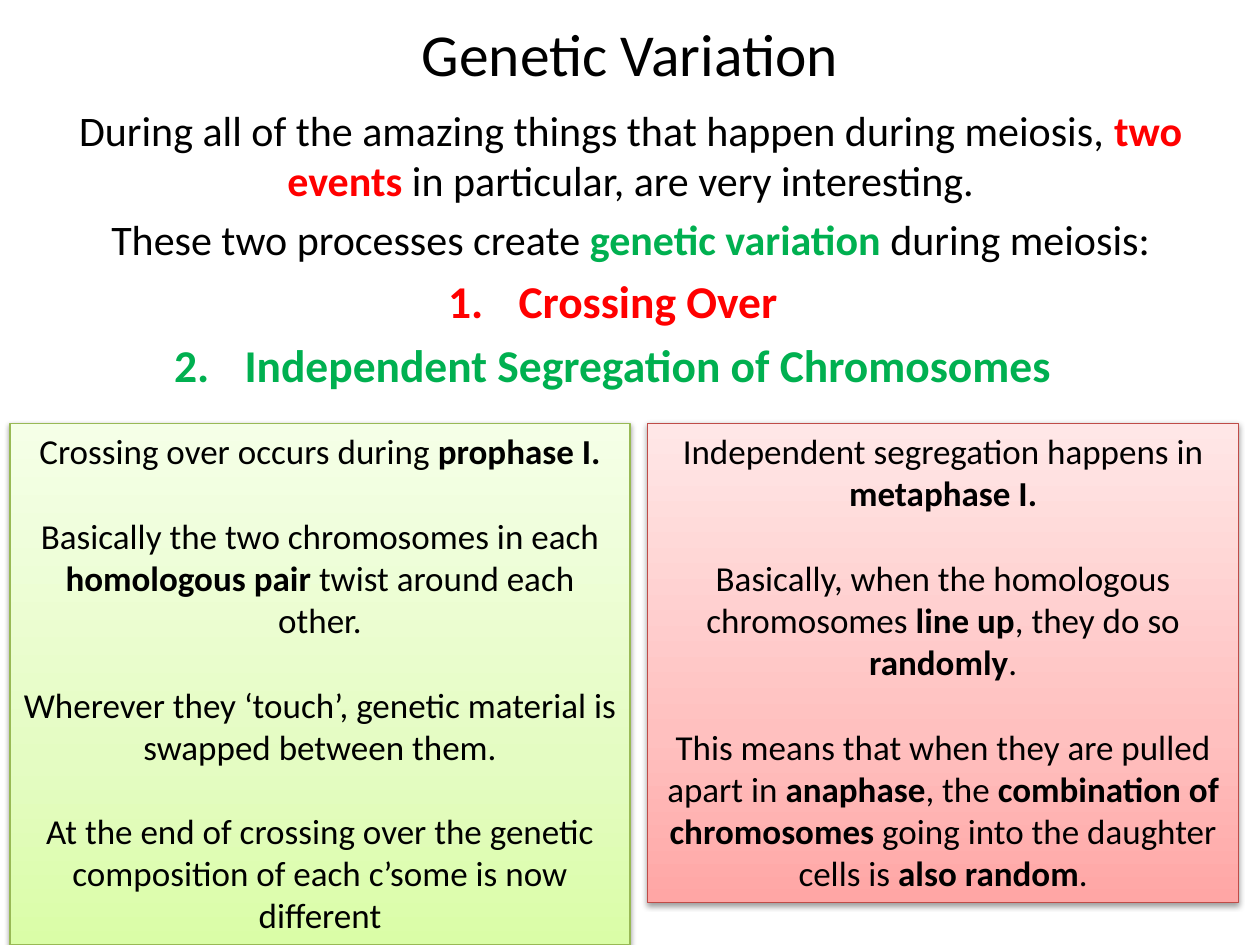
from lxml import etree
from pptx import Presentation
from pptx.dml.color import RGBColor
from pptx.enum.shapes import MSO_SHAPE
from pptx.enum.text import MSO_ANCHOR, PP_ALIGN
from pptx.oxml import parse_xml
from pptx.oxml.ns import nsdecls, qn
from pptx.util import Inches, Pt

RECTANGLE = MSO_SHAPE.RECTANGLE
CENTER = PP_ALIGN.CENTER
TOP, MIDDLE = MSO_ANCHOR.TOP, MSO_ANCHOR.MIDDLE

COLORS = {
    "text": "000000",
    "red": "FF0000",
    "green": "00B050",
    "red_line": "BF4C48",
    "green_line": "98B955",
}
GRADIENTS = {
    "red": {0: "FFA6A5", 35: "FFC0BF", 100: "FFE7E7"},
    "green": {0: "DAFDA7", 35: "E4FCC2", 100: "F5FFE7"},
}
LINE_HEIGHT = 1.22

INTRODUCTION = [
    ("During all of the amazing things that happen during meiosis, "
     "*two events* in particular, are very interesting.", "red"),
    ("These two processes create *genetic variation* during meiosis:", "green"),
]
EVENTS = [
    ("*Crossing Over*", "red"),
    ("*Independent Segregation of Chromosomes*", "green"),
]
SEGREGATION = [
    "Independent segregation happens in *metaphase I.*",
    "Basically, when the homologous chromosomes *line up*, they do so* randomly*.",
    "This means that when they are pulled apart in *anaphase*, the "
    "*combination of chromosomes *going into the daughter cells is *also random*.",
]
CROSSING = [
    "Crossing over occurs during *prophase I.*",
    "Basically the two chromosomes in each *homologous pair* twist around each other.",
    "Wherever they ‘touch’, genetic material is swapped between them.",
    "At the end of crossing over the genetic composition of each c’some is now different",
]


class MeiosisSlide:
    font = "Calibri"

    def __init__(self, presentation):
        self.width = presentation.slide_width
        self.height = presentation.slide_height
        self.slide = presentation.slides.add_slide(presentation.slide_layouts[6])

    def place(self, left, top, width, height):
        return (round(left * self.width), round(top * self.height),
                round(width * self.width), round(height * self.height))

    def frame(self, shape, anchor):
        text_frame = shape.text_frame
        for name, value in {"word_wrap": True, "vertical_anchor": anchor}.items():
            setattr(text_frame, name, value)
        return text_frame

    def add_text(self, text_frame, index, text, size, accent="text"):
        paragraph = text_frame.add_paragraph() if index else text_frame.paragraphs[0]
        paragraph.alignment = CENTER
        for position, part in enumerate(text.split("*")):
            if not part:
                continue
            bold = position % 2 == 1
            run = paragraph.add_run()
            run.text = part
            formats = {"name": self.font, "size": Pt(size), "bold": bold}
            for name, value in formats.items():
                setattr(run.font, name, value)
            color = COLORS[accent if bold else "text"]
            run.font.color.rgb = RGBColor.from_string(color)
        return paragraph

    def title(self, text, area):
        shape = self.slide.shapes.add_textbox(*self.place(*area))
        self.add_text(self.frame(shape, MIDDLE), 0, text, 34)

    def hang(self, paragraph, margin, indent, numbered):
        properties = paragraph._p.get_or_add_pPr()
        properties.set("marL", str(Inches(margin)))
        properties.set("indent", str(Inches(indent)))
        spacing = etree.SubElement(properties, qn("a:spcBef"))
        etree.SubElement(spacing, qn("a:spcPct"), val="20000")
        if numbered:
            etree.SubElement(properties, qn("a:buFont"), typeface="+mj-lt")
            etree.SubElement(properties, qn("a:buAutoNum"), type="arabicPeriod")

    def body(self, introduction, events, area):
        shape = self.slide.shapes.add_textbox(*self.place(*area))
        text_frame = self.frame(shape, TOP)
        for index, (text, accent) in enumerate(introduction + events):
            numbered = index >= len(introduction)
            size, margin, indent = (26, 0.19, -0.56) if numbered else (24, 0, -0.38)
            paragraph = self.add_text(text_frame, index, text, size, accent)
            self.hang(paragraph, margin, indent, numbered)

    def shade(self, shape, stops):
        marks = "".join(
            f'<a:gs pos="{position * 1000}"><a:srgbClr val="{color}"/></a:gs>'
            for position, color in stops.items())
        shape.fill.gradient()
        gradient = shape._element.spPr.find(qn("a:gradFill"))
        gradient.getparent().replace(gradient, parse_xml(
            f'<a:gradFill {nsdecls("a")} rotWithShape="1"><a:gsLst>{marks}</a:gsLst>'
            '<a:lin ang="16200000" scaled="1"/></a:gradFill>'))

    def drop_shadow(self, shape):
        shape.shadow.inherit = False
        effects = shape._element.spPr.find(qn("a:effectLst"))
        effects.append(parse_xml(
            f'<a:outerShdw {nsdecls("a")} blurRad="40000" dist="20000" dir="5400000" '
            'rotWithShape="0"><a:srgbClr val="000000"><a:alpha val="38000"/>'
            '</a:srgbClr></a:outerShdw>'))

    def panel(self, texts, tone, area):
        shape = self.slide.shapes.add_shape(RECTANGLE, *self.place(*area))
        self.shade(shape, GRADIENTS[tone])
        shape.line.color.rgb = RGBColor.from_string(COLORS[f"{tone}_line"])
        shape.line.width = Pt(0.75)
        self.drop_shadow(shape)
        text_frame = self.frame(shape, TOP)
        size = 20
        for index, text in enumerate(texts):
            paragraph = self.add_text(text_frame, index, text, size)
            if index:
                paragraph.space_before = Pt(size * LINE_HEIGHT)


def main():
    presentation = Presentation()
    presentation.slide_width = Inches(10)
    presentation.slide_height = Inches(7.5)
    meiosis = MeiosisSlide(presentation)
    panel_top = 0.448
    meiosis.title("Genetic Variation", (0.05, 0.03, 0.9, 0.052))
    meiosis.body(INTRODUCTION, EVENTS, (0.016, 0.104, 0.969, 0.875))
    meiosis.panel(SEGREGATION, "red", (0.514, panel_top, 0.469, 0.507))
    meiosis.panel(CROSSING, "green", (0.008, panel_top, 0.492, 0.552))
    presentation.save("out.pptx")


if __name__ == "__main__":
    main()
